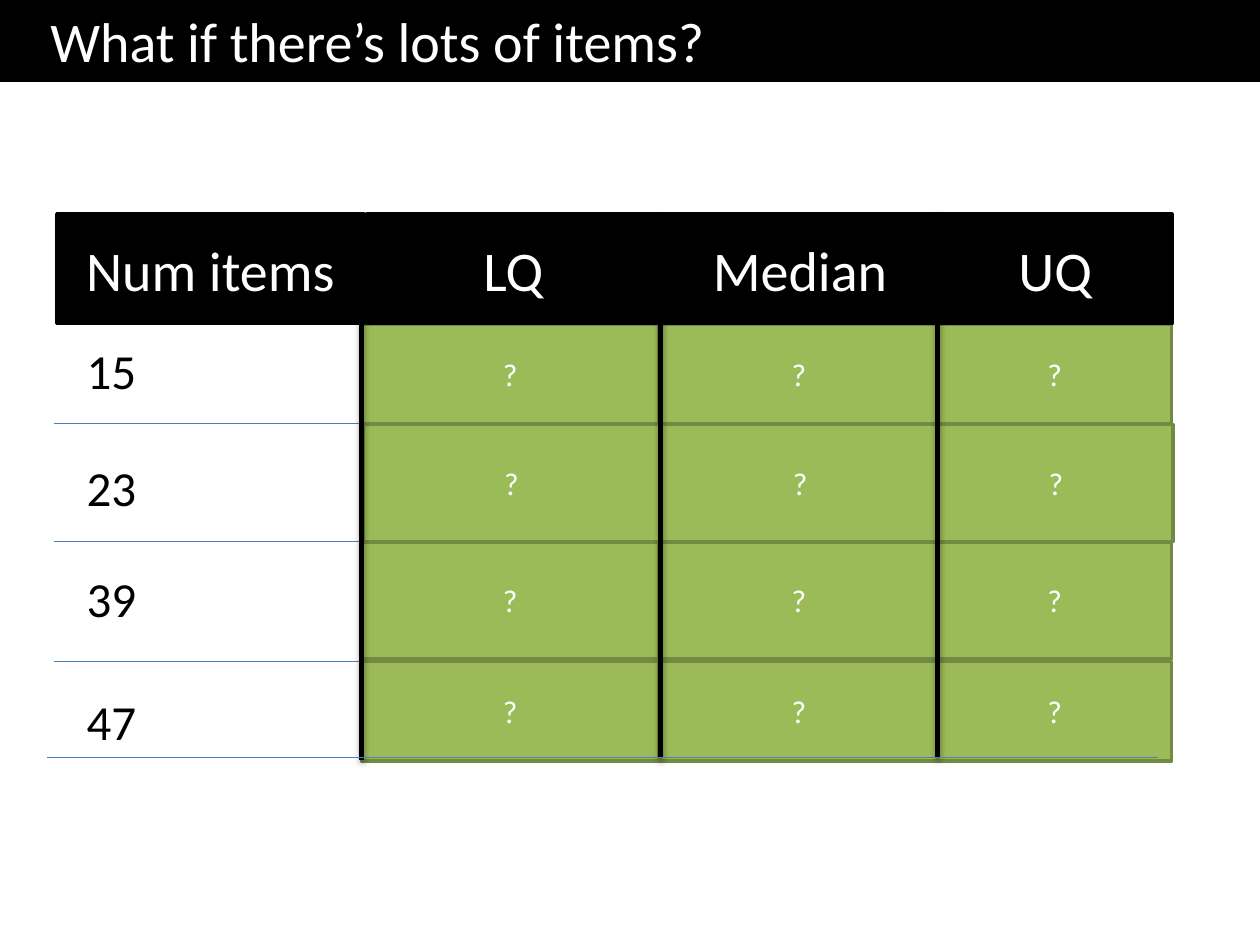
from lxml import etree
from pptx import Presentation, util as u
from pptx.dml.color import RGBColor
from pptx.enum import shapes, text
from pptx.oxml.ns import qn

COLORS = {
    "black": "000000",
    "white": "FFFFFF",
    "green": "9BBB59",
    "dark_green": "738A42",
    "blue": "4B7EBC",
}
FONT = "Calibri"

# Left edge and width of each answer column
COLUMNS = [(2.87, 2.36), (5.24, 2.2), (7.44, 1.86)]
# Heading, left edge and width of each header block
HEADERS = [
    ("Num items", 0.45, 2.44),
    ("LQ", 2.91, 2.33),
    ("Median", 5.25, 2.2),
    ("UQ", 7.45, 1.85),
]
# Number of items, top of the number, top and height of the row, sideways shift
ROWS = [
    ("15", 2.65, 2.57, 0.79, 0),
    ("23", 3.58, 3.37, 0.93, 0.01),
    ("39", 4.46, 4.3, 0.93, 0),
    ("47", 5.44, 5.25, 0.79, 0),
]
RULE_TOPS = [3.36, 4.3, 5.25]
RULE_WIDTH = 8.82
HEADER_TOP, HEADER_HEIGHT = 1.7, 0.87
DIVIDER_HEIGHT = 4.33


class SlideBuilder:
    def __init__(self, page):
        self.page = page

    def color(self, name):
        return RGBColor.from_string(COLORS[name])

    def set_text(self, shape, wording, size, color, align):
        para = shape.text_frame.paragraphs[0]
        para.text = wording
        para.alignment = align
        para.font.name = FONT
        para.font.size = u.Pt(size)
        para.font.color.rgb = self.color(color)

    def block(self, wording, left, top, width, height, size,
              fill="black", line="black", align=text.PP_ALIGN.CENTER):
        box = self.page.shapes.add_shape(
            shapes.MSO_SHAPE.RECTANGLE,
            u.Inches(left), u.Inches(top), u.Inches(width), u.Inches(height))
        box.shadow.inherit = False
        box.fill.solid()
        box.fill.fore_color.rgb = self.color(fill)
        box.line.color.rgb = self.color(line)
        box.line.width = u.Pt(2)
        box.text_frame.vertical_anchor = text.MSO_ANCHOR.MIDDLE
        self.set_text(box, wording, size, "white", align)
        return box

    def label(self, wording, left, top, width, height):
        box = self.page.shapes.add_textbox(
            u.Inches(left), u.Inches(top), u.Inches(width), u.Inches(height))
        box.text_frame.word_wrap = True
        self.set_text(box, wording, 28, "black", text.PP_ALIGN.LEFT)

    def line(self, left, top, right, bottom, color, width, shadow=False):
        line = self.page.shapes.add_connector(
            shapes.MSO_CONNECTOR.STRAIGHT,
            u.Inches(left), u.Inches(top), u.Inches(right), u.Inches(bottom))
        line.line.color.rgb = self.color(color)
        line.line.width = u.Pt(width)
        effects = etree.SubElement(line._element.spPr, qn("a:effectLst"))
        if shadow:
            outer = etree.SubElement(
                effects, qn("a:outerShdw"), blurRad=str(u.Pt(3.1)),
                dist=str(u.Pt(1.8)), dir="5400000", rotWithShape="0")
            tint = etree.SubElement(outer, qn("a:srgbClr"), val=COLORS["black"])
            etree.SubElement(tint, qn("a:alpha"), val="35000")

    def rule(self, left, top):
        self.line(left, top, left + RULE_WIDTH, top, "blue", 0.75)


def main():
    deck = Presentation()
    deck.slide_width, deck.slide_height = u.Inches(10), u.Inches(7.5)
    builder = SlideBuilder(deck.slides.add_slide(deck.slide_layouts[6]))

    for top in RULE_TOPS:
        builder.rule(0.43, top)
    for count, count_top, top, height, shift in ROWS:
        builder.label(count, 0.59, count_top, 1.5, 0.57)
        for left, width in COLUMNS:
            builder.block("?", left + shift, top, width, height, 18,
                          fill="green", line="dark_green")

    for index, (left, _) in enumerate(COLUMNS):
        top = HEADER_TOP - 0.01 * index
        builder.line(left, top, left, top + DIVIDER_HEIGHT, "black", 3, shadow=True)
    builder.rule(0.37, 6.01)

    title = builder.block("What if there’s lots of items?", 0, 0, 10, 0.64, 32,
                          align=text.PP_ALIGN.LEFT)
    title.text_frame.margin_left = u.Inches(0.4)

    for heading, left, width in HEADERS:
        builder.block(heading, left, HEADER_TOP, width, HEADER_HEIGHT, 32)

    deck.save("out.pptx")


if __name__ == "__main__":
    main()
